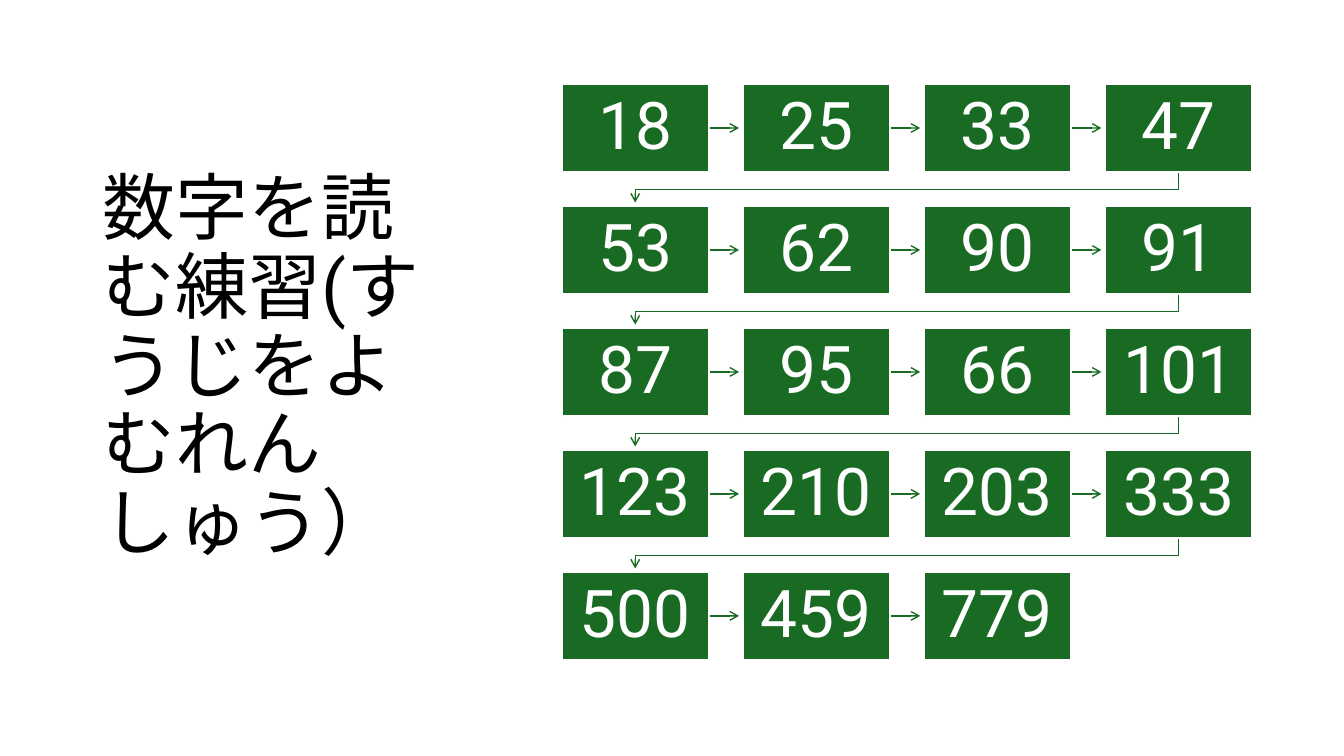
"""Build a number-reading practice slide with a snaking chain of boxes."""
import dataclasses
import typing

import lxml.etree
import pptx
import pptx.dml.color
import pptx.enum.lang
import pptx.enum.shapes
import pptx.enum.text
import pptx.oxml.ns
import pptx.util

Inches = pptx.util.Inches
Color = pptx.dml.color.RGBColor


@dataclasses.dataclass(frozen=True)
class Theme:
    """Colours, font and type sizes."""
    green: Color = Color(0x19, 0x6B, 0x24)
    white: Color = Color(0xFF, 0xFF, 0xFF)
    black: Color = Color(0, 0, 0)
    font: str = "Roboto"
    title_size: float = 52
    number_size: float = 47
    border: float = 1.5
    arrow: float = 1


@dataclasses.dataclass(frozen=True)
class NumberBox:
    """One number and the place of its box in inches."""
    number: int
    left: float
    top: float
    width: float = 1.46
    height: float = 0.88

    @property
    def center(self) -> float:
        """Return the horizontal centre."""
        return self.left + self.width / 2

    @property
    def middle(self) -> float:
        """Return the vertical centre."""
        return self.top + self.height / 2

    @property
    def bottom(self) -> float:
        """Return the lower edge."""
        return self.top + self.height


THEME = Theme()
TITLE = "数字を読む練習(すうじをよむれんしゅう）"
NUMBERS = (18, 25, 33, 47, 53, 62, 90, 91, 87, 95,
           66, 101, 123, 210, 203, 333, 500, 459, 779)
COLUMNS = 4
FIRST_LEFT, LAST_LEFT, FIRST_TOP, ROW_PITCH = 5.57, 10.96, 0.83, 1.21
COLUMN_PITCH = (LAST_LEFT - FIRST_LEFT) / (COLUMNS - 1)
ARROW_LENGTH, TURN_DROP = 0.3, 0.17


def apply_format(target: typing.Any, values: dict[str, typing.Any]) -> None:
    """Set each attribute named in a dict of format values."""
    for name, value in values.items():
        setattr(target, name, value)


def write_text(shape: typing.Any, text: str, size: float, color: Color,
               frame_format: dict[str, typing.Any],
               alignment: pptx.enum.text.PP_ALIGN) -> None:
    """Put one formatted paragraph in a shape."""
    apply_format(shape.text_frame, {
        "word_wrap": True,
        "auto_size": pptx.enum.text.MSO_AUTO_SIZE.NONE,
        "vertical_anchor": pptx.enum.text.MSO_ANCHOR.MIDDLE,
        **frame_format})
    para = shape.text_frame.paragraphs[0]
    apply_format(para, {"alignment": alignment, "line_spacing": 0.9})
    span = para.add_run()
    span.text = text
    apply_format(span.font, {
        "name": THEME.font, "size": pptx.util.Pt(size),
        "language_id": pptx.enum.lang.MSO_LANGUAGE_ID.JAPANESE})
    span.font.color.rgb = color


def add_title(page: typing.Any) -> None:
    """Place and format the title placeholder."""
    title = page.shapes.title
    apply_format(title, {"left": Inches(0.92), "top": Inches(0.61),
                         "width": Inches(3.69), "height": Inches(6.09)})
    write_text(title, TITLE, THEME.title_size, THEME.black, {},
               pptx.enum.text.PP_ALIGN.LEFT)


def add_box(page: typing.Any, box: NumberBox) -> None:
    """Draw a green box with its number."""
    shape = page.shapes.add_shape(
        pptx.enum.shapes.MSO_SHAPE.RECTANGLE, Inches(box.left),
        Inches(box.top), Inches(box.width), Inches(box.height))
    shape.shadow.inherit = False
    shape.fill.solid()
    shape.fill.fore_color.rgb = THEME.green
    shape.line.color.rgb = THEME.white
    shape.line.width = pptx.util.Pt(THEME.border)
    margins = {"margin_left": Inches(0.07), "margin_right": Inches(0.07),
               "margin_top": Inches(0.08), "margin_bottom": Inches(0.08)}
    write_text(shape, str(box.number), THEME.number_size, THEME.white,
               margins, pptx.enum.text.PP_ALIGN.CENTER)


def style_arrow(arrow: typing.Any) -> None:
    """Give a line its colour, width and open arrowhead."""
    arrow.line.color.rgb = THEME.green
    arrow.line.width = pptx.util.Pt(THEME.arrow)
    line = arrow.line._get_or_add_ln()
    lxml.etree.SubElement(line, pptx.oxml.ns.qn("a:tailEnd"), type="arrow")


def add_straight_arrow(page: typing.Any, box: NumberBox) -> None:
    """Draw an arrow to the next box in the row."""
    start = box.left + box.width
    arrow = page.shapes.add_connector(
        pptx.enum.shapes.MSO_CONNECTOR.STRAIGHT, Inches(start),
        Inches(box.middle), Inches(start + ARROW_LENGTH), Inches(box.middle))
    style_arrow(arrow)
    lxml.etree.SubElement(arrow._element.spPr, pptx.oxml.ns.qn("a:effectLst"))


def add_turning_arrow(page: typing.Any, box: NumberBox,
                      target: NumberBox) -> None:
    """Draw an arrow from a row's end to the next row's start."""
    turn = box.bottom + TURN_DROP
    points = ((box.center, turn), (target.center, turn),
              (target.center, box.bottom + ARROW_LENGTH))
    builder = page.shapes.build_freeform(
        Inches(box.center), Inches(box.bottom))
    builder.add_line_segments(
        [(Inches(x), Inches(y)) for x, y in points], close=False)
    arrow = builder.convert_to_shape()
    arrow.shadow.inherit = False
    arrow.fill.background()
    style_arrow(arrow)


def main() -> None:
    """Build and save the deck."""
    deck = pptx.Presentation()
    apply_format(deck, {"slide_width": Inches(13.33),
                        "slide_height": Inches(7.5)})
    page = deck.slides.add_slide(deck.slide_layouts.get_by_name("Title Only"))
    add_title(page)
    boxes = [NumberBox(number,
                       FIRST_LEFT + index % COLUMNS * COLUMN_PITCH,
                       FIRST_TOP + index // COLUMNS * ROW_PITCH)
             for index, number in enumerate(NUMBERS)]
    for box, target in zip(boxes, boxes[1:]):
        if target.top == box.top:
            add_straight_arrow(page, box)
        else:
            add_turning_arrow(page, box, target)
    for box in boxes:
        add_box(page, box)
    deck.save("out.pptx")


if __name__ == "__main__":
    main()
